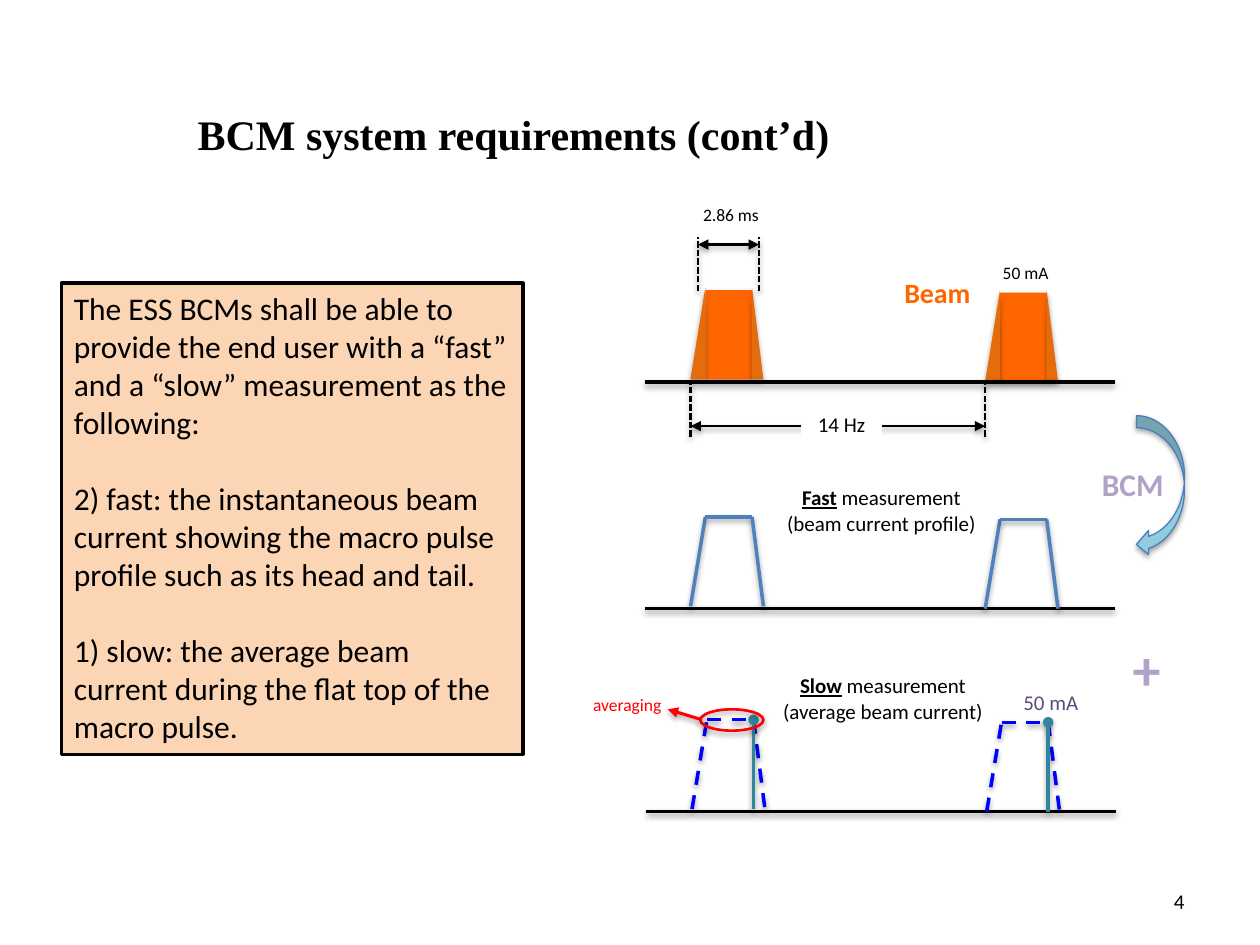
from pptx import Presentation
from pptx.dml.color import RGBColor
from pptx.enum.dml import MSO_LINE
from pptx.enum.shapes import MSO_CONNECTOR, MSO_SHAPE
from pptx.enum.text import MSO_ANCHOR, PP_ALIGN
from pptx.oxml import parse_xml
from pptx.oxml.ns import nsdecls
from pptx.util import Cm, Pt

LEFT, CENTER, RIGHT = PP_ALIGN.LEFT, PP_ALIGN.CENTER, PP_ALIGN.RIGHT
TOP, MIDDLE = MSO_ANCHOR.TOP, MSO_ANCHOR.MIDDLE
RECTANGLE, TRIANGLE = MSO_SHAPE.RECTANGLE, MSO_SHAPE.RIGHT_TRIANGLE
OVAL, CURVED_ARROW = MSO_SHAPE.OVAL, MSO_SHAPE.CURVED_LEFT_ARROW
STRAIGHT = MSO_CONNECTOR.STRAIGHT
DASH, SHORT_DASH = MSO_LINE.DASH, MSO_LINE.SQUARE_DOT

BLACK, WHITE, RED = "000000", "FFFFFF", "FF0000"
ORANGE, DARK_ORANGE = "FF6600", "E46C0A"
LILAC, TEAL = "B3A2C7", "31859C"

FIRST_FOOT, PERIOD, FOOT_RISE = 0.92, 5.94, 0.05
FLAT_START, FLAT_END, PULSE_WIDTH, PULSE_HEIGHT = 0.3, 1.24, 1.47, 1.8


def rgb(value):
    return RGBColor.from_string(value)


def add_shadow(item):
    item._element.spPr.append(parse_xml(
        f'<a:effectLst {nsdecls("a")}>'
        '<a:outerShdw blurRad="40000" dist="22000" dir="5400000" rotWithShape="0">'
        '<a:srgbClr val="000000"><a:alpha val="36000"/></a:srgbClr>'
        '</a:outerShdw></a:effectLst>'))


def add_line(page, start, end, color=BLACK, weight=2, dash=None, head=None, tail=None):
    line = page.shapes.add_connector(STRAIGHT, *map(Cm, start + end))
    line.line.color.rgb = rgb(color)
    line.line.width = Pt(weight)
    if dash:
        line.line.dash_style = dash
    for tag, kind in (("headEnd", head), ("tailEnd", tail)):
        if kind:
            line.line._get_or_add_ln().append(
                parse_xml(f'<a:{tag} {nsdecls("a")} type="{kind}"/>'))
    add_shadow(line)


def add_figure(page, kind, box, fill=None, outline=None, weight=0.75, shadow=True):
    figure = page.shapes.add_shape(kind, *map(Cm, box))
    if fill:
        figure.fill.solid()
        figure.fill.fore_color.rgb = rgb(fill)
    else:
        figure.fill.background()
    if outline:
        figure.line.color.rgb = rgb(outline)
        figure.line.width = Pt(weight)
    else:
        figure.line.fill.background()
    if shadow:
        add_shadow(figure)
    else:
        figure.shadow.inherit = False
    return figure


def format_text(frame, size, color=BLACK, bold=False, align=CENTER, anchor=TOP, font="Calibri"):
    frame.word_wrap = True
    frame.vertical_anchor = anchor
    for para in frame.paragraphs:
        para.alignment = align
        for span in para.runs:
            span.font.name = font
            span.font.size = Pt(size)
            span.font.bold = bold
            span.font.color.rgb = rgb(color)


def add_label(page, box, text, size, fill=None, **style):
    label = page.shapes.add_textbox(*map(Cm, box))
    if fill:
        label.fill.solid()
        label.fill.fore_color.rgb = rgb(fill)
    label.text_frame.text = text
    format_text(label.text_frame, size, **style)
    return label


def add_title(page, box, text):
    title = page.shapes.title
    title.left, title.top, title.width, title.height = map(Cm, box)
    title.text_frame.text = text
    format_text(title.text_frame, 24, bold=True, align=LEFT, font="Times New Roman")


def add_requirements(page, box, paragraphs):
    panel = add_figure(page, RECTANGLE, box, "FCD5B5", BLACK, 2, shadow=False)
    frame = panel.text_frame
    frame.text = "\n".join(paragraphs)
    format_text(frame, 18, align=LEFT)
    for para in frame.paragraphs[1:]:
        para.space_before = Pt(22)


def add_caption(page, left, top, keyword, detail):
    label = add_label(page, (left, top, 6.5, 1.27), f"{keyword}\n({detail})", 12, WHITE)
    first = label.text_frame.paragraphs[0]
    first.add_run().text = " measurement"
    format_text(label.text_frame, 12)
    first.runs[0].font.bold = True
    first.runs[0].font.underline = True


def add_dimension(page, box, arrow_offset):
    left, top, width, height = box
    for x in (left, left + width):
        add_line(page, (x, top + height), (x, top), weight=1.25, dash=SHORT_DASH)
    y = top + arrow_offset
    add_line(page, (left, y), (left + width, y), weight=1.25, head="triangle", tail="triangle")


def pulse_feet(left, baseline):
    first = left + FIRST_FOOT
    return (first, baseline - FOOT_RISE), (first + PERIOD, baseline)


def add_baseline(page, left, width, baseline):
    add_line(page, (left, baseline), (left + width, baseline))


def add_outline(page, foot, color, dash=None):
    x, y = foot
    top = y - PULSE_HEIGHT
    corners = [(x, y), (x + FLAT_START, top), (x + FLAT_END, top), (x + PULSE_WIDTH, y)]
    for start, end in zip(corners, corners[1:]):
        add_line(page, start, end, color, dash=dash)


def add_beam(page, box):
    left, top, width, height = box
    baseline = top + height
    add_label(page, (left + 4.98, top + 1.45, 2.03, 0.94), "Beam", 16, WHITE,
              color=ORANGE, bold=True, align=LEFT)
    add_dimension(page, (left + FIRST_FOOT, baseline, PERIOD, 1.11), 0.89)
    add_label(page, (left + 3.15, baseline + 0.48, 1.63, 0.76), "14 Hz", 12, WHITE)
    add_dimension(page, (left + 1.07, top + 0.79, 1.23, 1.09), 0.15)
    for x, y, text in ((0.92, 0, "2.86 ms"), (6.86, 1.17, "50 mA")):
        add_label(page, (left + x, top + y, 1.63, 0.69), text, 10, WHITE)
    edge = PULSE_HEIGHT + 0.05
    for x, y in pulse_feet(left, baseline):
        add_figure(page, RECTANGLE, (x + FLAT_START, y - PULSE_HEIGHT, 0.95, PULSE_HEIGHT), ORANGE)
        rise = add_figure(page, TRIANGLE, (x, y - edge, FLAT_START, edge), DARK_ORANGE)
        rise._element.spPr.xfrm.set("flipH", "1")
        add_figure(page, TRIANGLE, (x + FLAT_END, y - edge, PULSE_WIDTH - FLAT_END, edge),
                   DARK_ORANGE)
    add_baseline(page, left, width, baseline)


def add_fast(page, box):
    left, top, width, height = box
    add_caption(page, left + 1.52, top, "Fast", "beam current profile")
    add_baseline(page, left, width, top + height)
    for foot in pulse_feet(left, top + height):
        add_outline(page, foot, "4F81BD")


def add_slow(page, box):
    left, top, width, height = box
    add_caption(page, left + 1.52, top, "Slow", "average beam current")
    add_baseline(page, left, width, top + height)
    for x, y in pulse_feet(left, top + height):
        add_outline(page, (x, y), "0000FF", DASH)
        sample = x + FLAT_END
        add_line(page, (sample, y), (sample, y - PULSE_HEIGHT), TEAL, tail="oval")
    add_label(page, (left + 7.34, top + 0.33, 1.63, 0.76), "50 mA", 12, color="604A7B")
    add_figure(page, OVAL, (left + 1.09, top + 0.86, 1.27, 0.43), outline=RED, weight=1.5)
    add_line(page, (left + 1.09, top + 1.06), (left + 0.43, top + 0.86), RED, 1.75,
             tail="triangle")
    add_label(page, (left - 1.96, top + 0.43, 2.51, 0.69), "averaging", 10,
              color=RED, align=RIGHT)


def add_monitor(page, box):
    left, top, width, height = box
    add_figure(page, CURVED_ARROW, (left + width - 0.97, top, 0.97, 2.84), "93CDDD", "4B7EBC")
    add_label(page, (left + 0.28, top + height - 1.63, 2.03, 1.63), "+", 32, WHITE,
              color=LILAC, bold=True)
    add_label(page, (left, top + 0.87, 2.03, 1.02), "BCM", 18, color=LILAC, bold=True)


def main():
    deck = Presentation()
    deck.slide_width, deck.slide_height = Cm(25.4), Cm(19.05)
    page = deck.slides.add_slide(deck.slide_layouts[5])
    add_title(page, (3.73, 2.06, 19.91, 1.27), "BCM system requirements (cont’d)")
    add_requirements(page, (1.24, 5.71, 9.3, 9.5), [
        "The ESS BCMs shall be able to provide the end user with a “fast” and a “slow” "
        "measurement as the following:",
        "2) fast: the instantaneous beam current showing the macro pulse profile such as "
        "its head and tail.",
        "1) slow: the average beam current during the flat top of the macro pulse.",
    ])
    add_beam(page, (13, 3.99, 9.47, 3.71))
    add_fast(page, (13, 9.65, 9.47, 2.62))
    add_slow(page, (13.03, 13.44, 9.47, 2.92))
    add_monitor(page, (21.82, 8.38, 2.06, 5.92))
    add_label(page, (18.21, 17.65, 5.92, 1.02), "4", 12, align=RIGHT, anchor=MIDDLE)
    deck.save("out.pptx")


if __name__ == "__main__":
    main()
